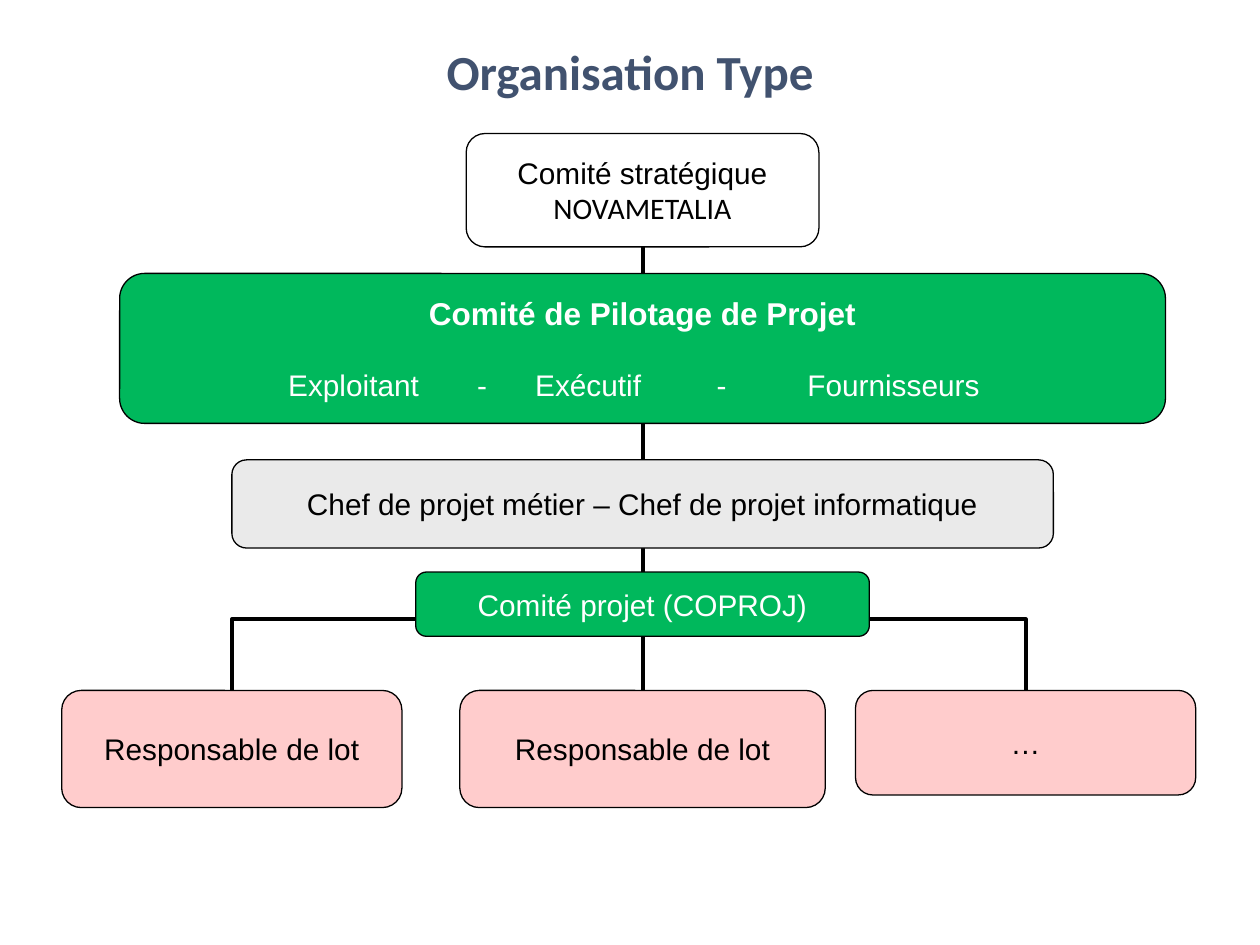
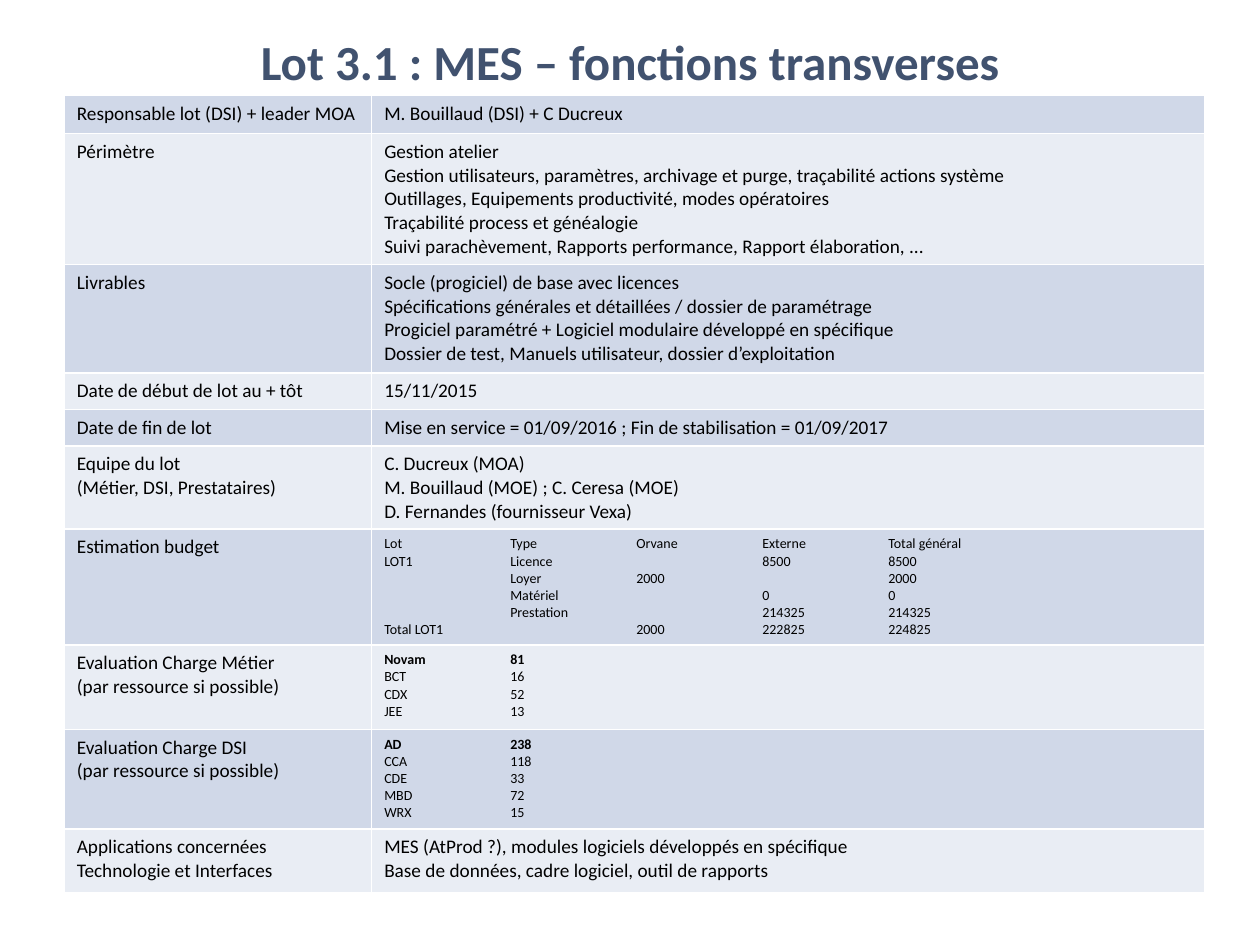
from lxml import etree
from pptx import Presentation
from pptx import util as u
from pptx.dml.color import RGBColor
from pptx.enum import shapes, text
from pptx.oxml import ns


class Theme:
    heading, body = "Calibri", "Arial"
    title, ink, white = "41526F", "000000", "FFFFFF"
    green, grey, pink = "00B85C", "EAEAEA", "FFCCCC"
    bands = ("D0D8E8", "E9EDF4")
    title_size, lead_size, box_size, cell_size, figure_size = 28, 18, 17, 11, 8
    outline, link, border = 0.75, 2.25, 1


def write(para, words, size, color=Theme.ink, font=Theme.heading, bold=False, align=text.PP_ALIGN.LEFT, tabs=()):
    """Fill one paragraph; tab stops are in columns."""
    para.text = words
    para.alignment = align
    if tabs:
        stops = etree.SubElement(para._p.get_or_add_pPr(), ns.qn("a:tabLst"))
        for stop in tabs:
            etree.SubElement(stops, ns.qn("a:tab"), pos=str(u.Inches(stop)), algn="l")
    para.font.size, para.font.bold, para.font.name = u.Pt(size), bold, font
    para.font.color.rgb = RGBColor.from_string(color)


def add_page(deck, title, top):
    """Add a blank page with a centred title."""
    page = deck.slides.add_slide(deck.slide_layouts[6])
    box = page.shapes.add_textbox(*map(u.Inches, (0.5, top, 9, 0.71)))
    box.text_frame.word_wrap = True
    box.text_frame.vertical_anchor = text.MSO_ANCHOR.MIDDLE
    write(box.text_frame.paragraphs[0], title, Theme.title_size, Theme.title, bold=True, align=text.PP_ALIGN.CENTER)
    return page


# The grid has 10 columns and 7.5 rows, one inch each
deck = Presentation()
deck.slide_width, deck.slide_height = u.Inches(10), u.Inches(7.5)

# Slide 1: organisation chart
page = add_page(deck, "Organisation Type", 0.21)
axis = 5.1
lot_centres = (1.84, axis, 8.14)
lot_top = 5.48

# Links: parent centre and bottom, child centre and top
links = [(axis, 1.96, axis, 2.17), (axis, 3.36, axis, 3.65)]
links += [(axis, 4.35, centre, lot_top) for centre in lot_centres]
for parent_x, parent_y, child_x, child_y in links:
    # An elbow starts sideways, so it is laid flat and turned a quarter
    mid_x, mid_y = (parent_x + child_x) / 2, (parent_y + child_y) / 2
    half_drop, half_shift = (child_y - parent_y) / 2, (parent_x - child_x) / 2
    ends = (mid_x - half_drop, mid_y - half_shift, mid_x + half_drop, mid_y + half_shift)
    link = page.shapes.add_connector(shapes.MSO_CONNECTOR.ELBOW, *map(u.Inches, ends))
    link.line.width = u.Pt(Theme.link)
    link.line.color.rgb = RGBColor.from_string(Theme.ink)
    link._element.spPr.find(ns.qn("a:xfrm")).set("rot", "5400000")
    etree.SubElement(link._element.spPr, ns.qn("a:effectLst"))

# Boxes: centre, top, width, height, fill, text colour, lines
boxes = [
    (axis, 1.06, 2.8, 0.9, Theme.white, Theme.ink, ["Comité stratégique", "NOVAMETALIA"]),
    (axis, 2.17, 8.3, 1.19, Theme.green, Theme.white,
     ["Comité de Pilotage de Projet", "\tExploitant\t-\tExécutif\t-\tFournisseurs"]),
    (axis, 3.65, 6.52, 0.7, Theme.grey, Theme.ink, ["Chef de projet métier – Chef de projet informatique"]),
    (axis, 4.54, 3.6, 0.51, Theme.green, Theme.white, ["Comité projet (COPROJ)"]),
]
lots = [("Responsable de lot", 2.7, 0.93), ("Responsable de lot", 2.9, 0.93), ("…", 2.7, 0.83)]
for centre, (name, width, height) in zip(lot_centres, lots):
    boxes.append((centre, lot_top, width, height, Theme.pink, Theme.ink, [name]))

for centre, top, width, height, fill, color, lines in boxes:
    place = map(u.Inches, (centre - width / 2, top, width, height))
    box = page.shapes.add_shape(shapes.MSO_SHAPE.ROUNDED_RECTANGLE, *place)
    box.shadow.inherit = False
    box.fill.solid()
    box.fill.fore_color.rgb = RGBColor.from_string(fill)
    box.line.width = u.Pt(Theme.outline)
    box.line.color.rgb = RGBColor.from_string(Theme.ink)
    frame = box.text_frame
    frame.word_wrap = True
    frame.vertical_anchor = text.MSO_ANCHOR.MIDDLE
    frame.margin_left = frame.margin_top = frame.margin_right = frame.margin_bottom = 0
    for index, words in enumerate(lines):
        para = frame.add_paragraph() if index else frame.paragraphs[0]
        lead = words.startswith("Comité de Pilotage")
        members = "\t" in words
        write(para, words, Theme.lead_size if lead else Theme.box_size, color,
              Theme.heading if words.isupper() else Theme.body, lead,
              text.PP_ALIGN.LEFT if members else text.PP_ALIGN.CENTER,
              (1.28, 2.78, 3.24, 4.68, 5.4) if members else ())
        if members:
            para.space_before = u.Pt(20)

# Slide 2: lot description
page = add_page(deck, "Lot 3.1 : MES – fonctions transverses", 0.13)

# Rows: height, label lines, content lines
rows = [
    (0.3, ["Responsable lot (DSI) + leader MOA"], ["M. Bouillaud (DSI) + C Ducreux"]),
    (1.04, ["Périmètre"], [
        "Gestion atelier",
        "Gestion utilisateurs, paramètres, archivage et purge, traçabilité actions système",
        "Outillages, Equipements productivité, modes opératoires",
        "Traçabilité process et généalogie",
        "Suivi parachèvement, Rapports performance, Rapport élaboration, ..."]),
    (0.86, ["Livrables"], [
        "Socle (progiciel) de base avec licences",
        "Spécifications générales et détaillées / dossier de paramétrage",
        "Progiciel paramétré + Logiciel modulaire développé en spécifique",
        "Dossier de test, Manuels utilisateur, dossier d’exploitation"]),
    (0.29, ["Date de début de lot au + tôt"], ["15/11/2015"]),
    (0.29, ["Date de fin de lot"], ["Mise en service = 01/09/2016 ; Fin de stabilisation = 01/09/2017"]),
    (0.66, ["Equipe du lot", "(Métier, DSI, Prestataires)"], [
        "C. Ducreux (MOA)",
        "M. Bouillaud (MOE) ; C. Ceresa (MOE)",
        "D. Fernandes (fournisseur Vexa)"]),
    (0.92, ["Estimation budget"], [
        "Lot\tType\tOrvane\tExterne\tTotal général",
        "LOT1\tLicence\t\t8500\t8500",
        "\tLoyer\t2000\t\t2000",
        "\tMatériel\t\t0\t0",
        "\tPrestation\t\t214325\t214325",
        "Total LOT1\t\t2000\t222825\t224825"]),
    (0.67, ["Evaluation Charge Métier", "(par ressource si possible)"],
     ["Novam\t81", "BCT\t16", "CDX\t52", "JEE\t13"]),
    (0.79, ["Evaluation Charge DSI", "(par ressource si possible)"],
     ["AD\t238", "CCA\t118", "CDE\t33", "MBD\t72", "WRX\t15"]),
    (0.51, ["Applications concernées", "Technologie et Interfaces"], [
        "MES (AtProd ?), modules logiciels développés en spécifique",
        "Base de données, cadre logiciel, outil de rapports"]),
]
widths = (2.44, 6.61)
total_height = sum(row[0] for row in rows)
table = page.shapes.add_table(len(rows), 2, *map(u.Inches, (0.51, 0.76, sum(widths), total_height))).table
table.first_row = table.horz_banding = False
for column, width in zip(table.columns, widths):
    column.width = u.Inches(width)

for row_index, (height, *contents) in enumerate(rows):
    table.rows[row_index].height = u.Inches(height)
    for column_index, lines in enumerate(contents):
        cell = table.cell(row_index, column_index)
        # Borders come before the fill in the cell properties
        for side in ("a:lnL", "a:lnR", "a:lnT", "a:lnB"):
            edge = etree.SubElement(cell._tc.get_or_add_tcPr(), ns.qn(side), w=str(u.Pt(Theme.border)))
            paint = etree.SubElement(edge, ns.qn("a:solidFill"))
            etree.SubElement(paint, ns.qn("a:srgbClr"), val=Theme.white)
        cell.fill.solid()
        cell.fill.fore_color.rgb = RGBColor.from_string(Theme.bands[row_index % 2])
        for index, words in enumerate(lines):
            para = cell.text_frame.add_paragraph() if index else cell.text_frame.paragraphs[0]
            figures = "\t" in words
            # A two-column list of workloads opens with its bold total
            write(para, words, Theme.figure_size if figures else Theme.cell_size,
                  bold=index == 0 and words.count("\t") == 1, tabs=range(1, 5) if figures else ())

deck.save("out.pptx")
